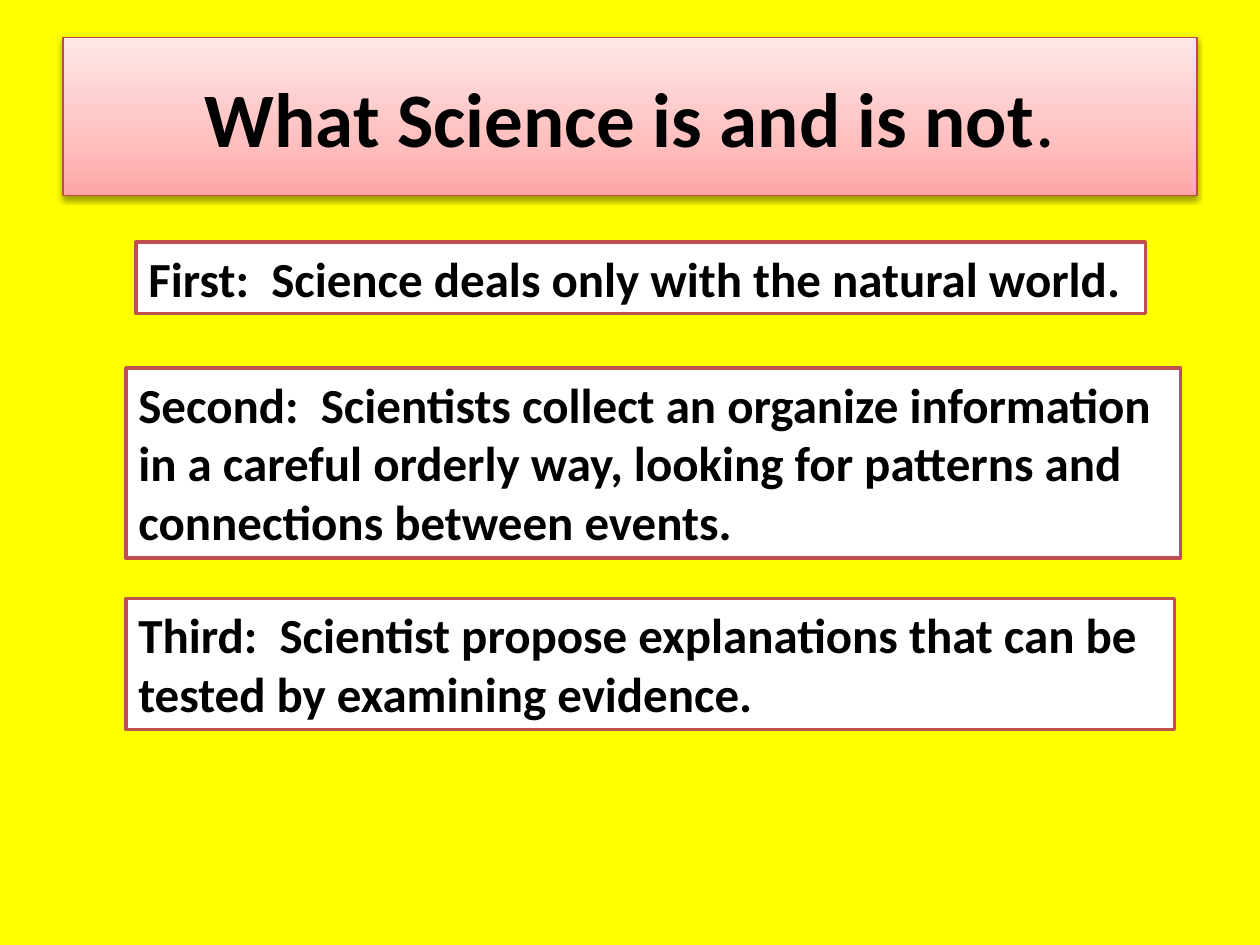
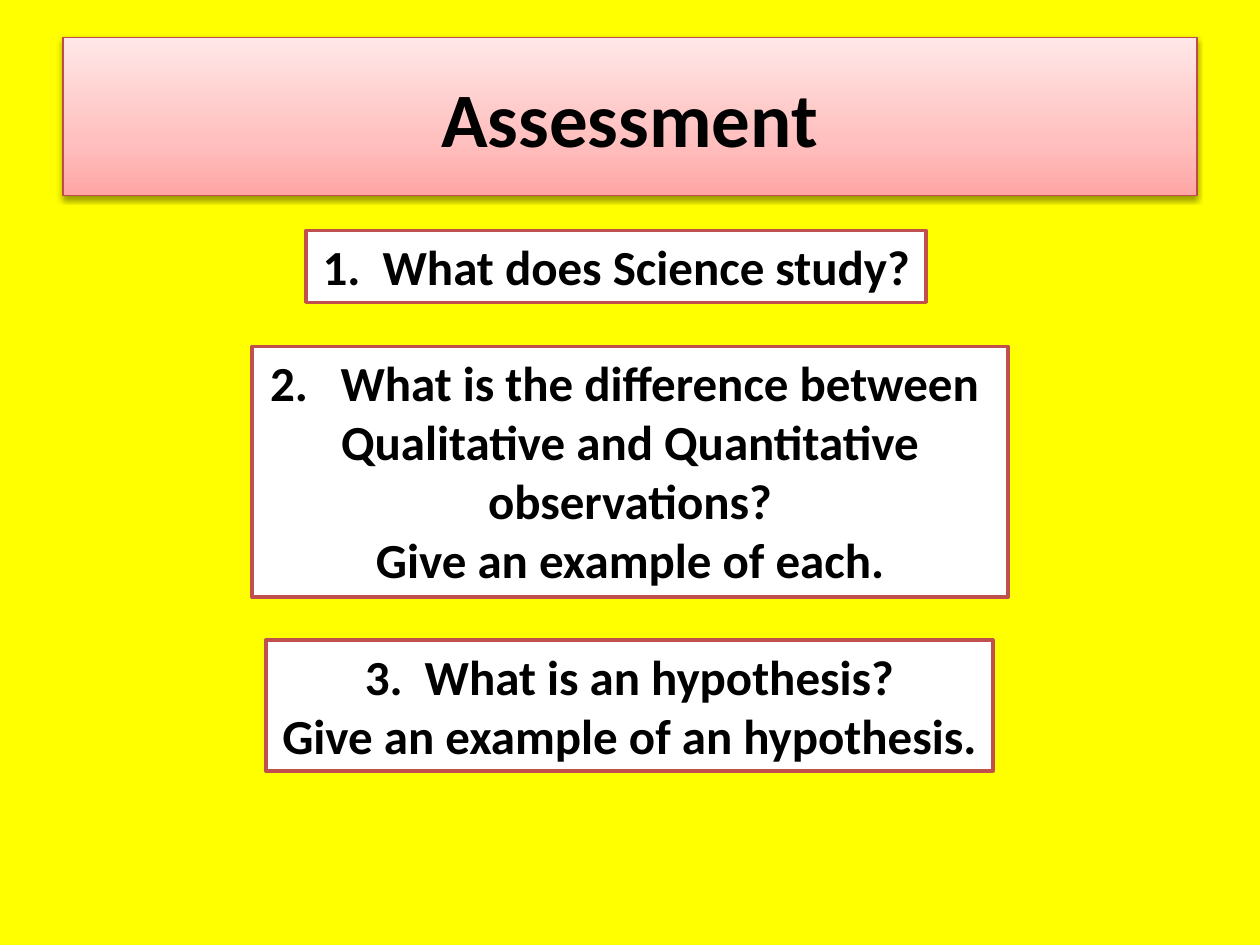
from dataclasses import dataclass

from pptx import Presentation
from pptx import util as u
from pptx.dml.color import RGBColor
from pptx.enum import shapes, text
from pptx.oxml import ns
from lxml import etree

FONT = "Calibri"
COLOURS = {
    "background": "FFFF00",
    "text": "000000",
    "box": "FFFFFF",
    "box_line": "C0504D",
    "title_line": "BF4C48",
    "shadow": "000000",
}
TITLE_STOPS = ((0, "FFA6A5"), (35, "FFC0BF"), (100, "FFE7E7"))
HANGING = 0.56


@dataclass(frozen=True)
class Statement:
    left: float
    top: float
    width: float
    height: float
    lines: tuple[str, ...]
    centred: bool = False
    hanging: bool = False
    number: int | None = None


@dataclass(frozen=True)
class Page:
    title: str
    statements: tuple[Statement, ...]
    plain_ending: str = ""


PAGES = (
    Page("What Science is and is not", (
        Statement(1.08, 1.92, 8.01, 0.57, (
            "First:  Science deals only with the natural world.",)),
        Statement(1, 2.92, 8.37, 1.51, (
            "Second:  Scientists collect an organize information",
            "in a careful orderly way, looking for patterns and",
            "connections between events.")),
        Statement(1, 4.75, 8.32, 1.04, (
            "Third:  Scientist propose explanations that can be",
            "tested by examining evidence.")),
    ), plain_ending="."),
    Page("Assessment", (
        Statement(2.43, 1.83, 4.92, 0.57, (
            "1.  What does Science study?",), centred=True),
        Statement(2, 2.75, 6, 1.99, (
            "What is the difference between ",
            "Qualitative and Quantitative",
            "observations?",
            "Give an example of each."), centred=True, hanging=True, number=2),
        Statement(2.11, 5.08, 5.77, 1.04, (
            "3.  What is an hypothesis?",
            "Give an example of an hypothesis."), centred=True, hanging=True),
    )),
)


def colour(name: str) -> RGBColor:
    return RGBColor.from_string(COLOURS[name])


def add_xml(parent, tag: str, **attributes):
    return etree.SubElement(parent, ns.qn(tag), attributes)


def format_run(span, size: float, bold: bool = True) -> None:
    span.font.name = FONT
    span.font.size = u.Pt(size)
    span.font.bold = bold
    span.font.color.rgb = colour("text")


def set_outline(box, name: str, width: float) -> None:
    box.line.color.rgb = colour(name)
    box.line.width = u.Pt(width)


def fill_title_gradient(box) -> None:
    box.fill.gradient()
    box.fill.gradient_angle = 90
    stops = box._element.spPr.find(".//" + ns.qn("a:gsLst"))
    for stop in list(stops):
        stops.remove(stop)
    for position, value in TITLE_STOPS:
        stop = add_xml(stops, "a:gs", pos=str(position * 1000))
        add_xml(stop, "a:srgbClr", val=value)


def add_drop_shadow(box) -> None:
    box.shadow.inherit = False
    effects = box._element.spPr.find(ns.qn("a:effectLst"))
    shadow = add_xml(effects, "a:outerShdw", blurRad=str(u.Pt(3.1)),
                     dist=str(u.Pt(1.6)), dir="5400000", rotWithShape="0")
    tint = add_xml(shadow, "a:srgbClr", val=COLOURS["shadow"])
    add_xml(tint, "a:alpha", val="38000")


def add_title(slide, page: Page) -> None:
    box = slide.shapes.add_shape(
        shapes.MSO_SHAPE.RECTANGLE,
        u.Inches(0.5), u.Inches(0.3), u.Inches(9), u.Inches(1.25))
    fill_title_gradient(box)
    set_outline(box, "title_line", 0.75)
    add_drop_shadow(box)
    frame = box.text_frame
    frame.vertical_anchor = text.MSO_ANCHOR.MIDDLE
    frame.text = page.title
    para = frame.paragraphs[0]
    para.alignment = text.PP_ALIGN.CENTER
    format_run(para.runs[0], 44)
    if page.plain_ending:
        ending = para.add_run()
        ending.text = page.plain_ending
        format_run(ending, 44, bold=False)


def add_statement(slide, statement: Statement) -> None:
    box = slide.shapes.add_textbox(
        u.Inches(statement.left), u.Inches(statement.top),
        u.Inches(statement.width), u.Inches(statement.height))
    box.fill.solid()
    box.fill.fore_color.rgb = colour("box")
    set_outline(box, "box_line", 2)
    frame = box.text_frame
    frame.word_wrap = False
    frame.auto_size = text.MSO_AUTO_SIZE.SHAPE_TO_FIT_TEXT
    frame.text = "\n".join(statement.lines)
    for para in frame.paragraphs:
        para.alignment = (text.PP_ALIGN.CENTER if statement.centred
                          else text.PP_ALIGN.LEFT)
        if statement.hanging:
            properties = para._p.get_or_add_pPr()
            properties.set("marL", str(u.Inches(HANGING)))
            properties.set("indent", str(-u.Inches(HANGING)))
        format_run(para.runs[0], 28)
    if statement.number is not None:
        properties = frame.paragraphs[0]._p.get_or_add_pPr()
        add_xml(properties, "a:buFont", typeface="+mj-lt")
        add_xml(properties, "a:buAutoNum", type="arabicPeriod",
                startAt=str(statement.number))


def add_page(deck, page: Page) -> None:
    slide = deck.slides.add_slide(deck.slide_layouts[6])
    slide.background.fill.solid()
    slide.background.fill.fore_color.rgb = colour("background")
    add_title(slide, page)
    for statement in page.statements:
        add_statement(slide, statement)


def main() -> None:
    deck = Presentation()
    deck.slide_width = u.Inches(10)
    deck.slide_height = u.Inches(7.5)
    for page in PAGES:
        add_page(deck, page)
    deck.save("out.pptx")


if __name__ == "__main__":
    main()
